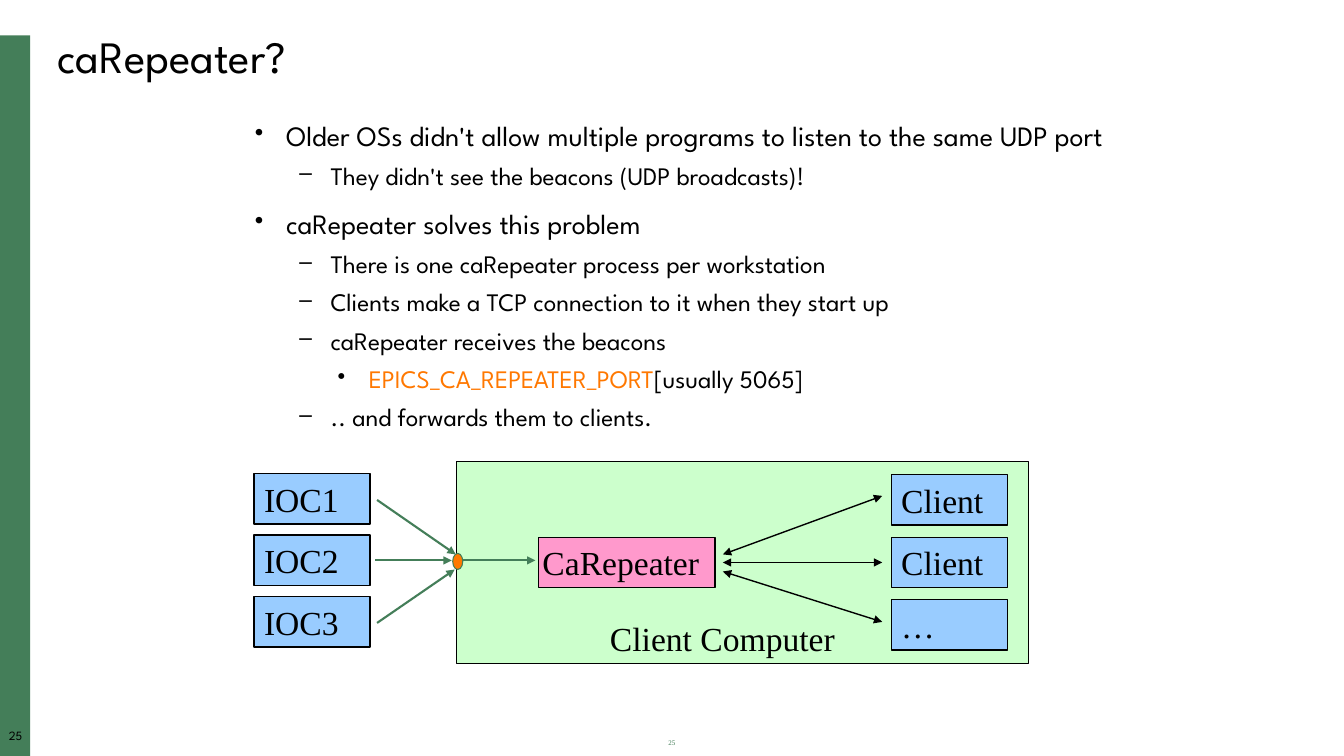
import pptx
import pptx.util
import pptx.dml.color
import pptx.enum.shapes
import pptx.enum.text
import pptx.oxml
import pptx.oxml.ns
from dataclasses import dataclass

Inches = pptx.util.Inches
Pt = pptx.util.Pt
Shape = pptx.enum.shapes.MSO_SHAPE
Align = pptx.enum.text.PP_ALIGN
Anchor = pptx.enum.text.MSO_ANCHOR


@dataclass(frozen=True)
class Theme:
    sans: str = "League Spartan"
    serif: str = "Times New Roman"
    black: str = "000000"
    green: str = "447E59"
    orange: str = "FF7800"
    mint: str = "CCFFCC"
    pink: str = "FF99CC"
    blue: str = "99CCFF"
    title: int = 32
    lead: int = 20
    sub: int = 18
    label: int = 24
    page: int = 9
    tiny: int = 5


theme = Theme()

TITLE = "caRepeater?"
PAGE = "25"
POINTS = [
    (0, [("Older OSs didn't allow multiple programs to listen to the same UDP port", theme.black)]),
    (1, [("They didn't see the beacons (UDP broadcasts)!", theme.black)]),
    (0, [("caRepeater solves this problem", theme.black)]),
    (1, [("There is one caRepeater process per workstation", theme.black)]),
    (1, [("Clients make a TCP connection to it when they start up", theme.black)]),
    (1, [("caRepeater receives the beacons", theme.black)]),
    (2, [("EPICS_CA_REPEATER_PORT", theme.orange), ("[usually 5065]", theme.black)]),
    (1, [(".. and forwards them to clients.", theme.black)]),
]
LEVELS = [
    (0.31, "•", theme.lead, 14),
    (0.75, "–", theme.sub, 8),
    (1.13, "•", theme.sub, 8),
]
HOST = "Client Computer"
HUB = "CaRepeater"
STACKS = [
    (2.52, 4.7, 0.61, ["IOC1", "IOC2", "IOC3"]),
    (8.84, 4.71, 0.62, ["Client", "Client", "…"]),
]
BOX = (1.15, 0.5)
INSET = (0.1, 0.05, 0.1, 0.05)
BOTH = [
    (7.17, 5.5, 8.75, 4.92),
    (7.17, 5.67, 8.75, 6.17),
    (7.17, 5.58, 8.75, 5.58),
]
FLOW = [
    (3.72, 5.56, 4.48, 5.56),
    (3.74, 4.96, 4.52, 5.5),
    (3.74, 6.18, 4.51, 5.65),
    (4.55, 5.56, 5.31, 5.56),
]


def color(code):
    return pptx.dml.color.RGBColor.from_string(code)


def child(node, tag, **attrs):
    item = pptx.oxml.parse_xml(f"<a:{tag} {pptx.oxml.ns.nsdecls('a')}/>")
    for key, value in attrs.items():
        item.set(key, value)
    node.append(item)
    return item


def style(para, face, size, code=None):
    para.font.name = face
    para.font.size = Pt(size)
    if code:
        para.font.color.rgb = color(code)


def setup(frame, inset=INSET, anchor=Anchor.TOP):
    frame.word_wrap = True
    frame.vertical_anchor = anchor
    (frame.margin_left, frame.margin_top,
     frame.margin_right, frame.margin_bottom) = map(Inches, inset)


def write(slide, text, place, face, size, code, align=Align.LEFT, inset=INSET):
    frame = slide.shapes.add_textbox(*map(Inches, place)).text_frame
    setup(frame, inset)
    para = frame.paragraphs[0]
    para.text = text
    para.alignment = align
    para.line_spacing = 0.9
    style(para, face, size, code)


def block(slide, place, fill, width=0, edge=theme.black, kind=Shape.RECTANGLE):
    shape = slide.shapes.add_shape(kind, *map(Inches, place))
    shape.shadow.inherit = False
    shape.fill.solid()
    shape.fill.fore_color.rgb = color(fill)
    if width:
        shape.line.color.rgb = color(edge)
        shape.line.width = Pt(width)
    else:
        shape.line.fill.background()
    return shape


def label(shape, text, inset=INSET, anchor=Anchor.MIDDLE):
    frame = shape.text_frame
    setup(frame, inset, anchor)
    para = frame.paragraphs[0]
    para.text = text
    para.alignment = Align.LEFT
    style(para, theme.serif, theme.label, theme.black)


def arrow(slide, ends, code, width, tags):
    link = slide.shapes.add_connector(
        pptx.enum.shapes.MSO_CONNECTOR.STRAIGHT, *map(Inches, ends))
    link.line.color.rgb = color(code)
    link.line.width = Pt(width)
    line = link.line._get_or_add_ln()
    for tag in tags:
        child(line, tag, type="triangle")
    child(link._element.spPr, "effectLst")


def bullets(slide):
    frame = slide.shapes.add_textbox(*map(Inches, (2.43, 1.16, 8.96, 3.66))).text_frame
    setup(frame)
    for rank, (level, runs) in enumerate(POINTS):
        left, mark, size, gap = LEVELS[level]
        para = frame.add_paragraph() if rank else frame.paragraphs[0]
        para.level = level
        props = para._p.get_or_add_pPr()
        props.set("marL", str(Inches(left)))
        props.set("indent", str(-Inches(0.31)))
        child(child(props, "buClr"), "srgbClr", val=theme.black)
        child(props, "buSzPct", val="90000")
        child(props, "buChar", char=mark)
        para.line_spacing = 0.9
        para.space_before = Pt(gap if rank else 0)
        mixed = len(runs) > 1
        style(para, theme.sans, size, None if mixed else runs[0][1])
        for text, code in runs:
            run = para.add_run()
            run.text = text
            if mixed:
                run.font.color.rgb = color(code)


def diagram(slide):
    host = block(slide, (4.53, 4.58, 5.67, 2), theme.mint, 0.75)
    label(host, HOST, (1.52, 0.05, 0.1, 0.05), Anchor.BOTTOM)
    hub = block(slide, (5.34, 5.33, 1.75, 0.5), theme.pink, 1)
    label(hub, HUB, (0.04, 0.02, 0.04, 0.02))
    for left, top, pitch, names in STACKS:
        for row, name in enumerate(names):
            label(block(slide, (left, top + row * pitch, *BOX), theme.blue, 1), name)
    for ends in BOTH:
        arrow(slide, ends, theme.black, 1, ["headEnd", "tailEnd"])
    for ends in FLOW:
        arrow(slide, ends, theme.green, 1.5, ["tailEnd"])
    block(slide, (4.49, 5.49, 0.1, 0.16), theme.orange, 0.75, theme.green,
          Shape.FLOWCHART_CONNECTOR)


def main():
    deck = pptx.Presentation()
    deck.slide_width, deck.slide_height = Inches(13.33), Inches(7.5)
    slide = deck.slides.add_slide(deck.slide_layouts[6])
    block(slide, (0, 0.35, 0.3, 7.15), theme.green)
    write(slide, PAGE, (0, 7.24, 0.31, 0.17), theme.sans, theme.page,
          theme.black, Align.CENTER, (0, 0, 0, 0))
    write(slide, PAGE, (5.08, 7.29, 3.17, 0.2), theme.serif, theme.tiny,
          theme.green, Align.CENTER)
    write(slide, TITLE, (0.47, 0.3, 12.5, 0.59), theme.sans, theme.title, theme.black)
    bullets(slide)
    diagram(slide)
    deck.save("out.pptx")


if __name__ == "__main__":
    main()
